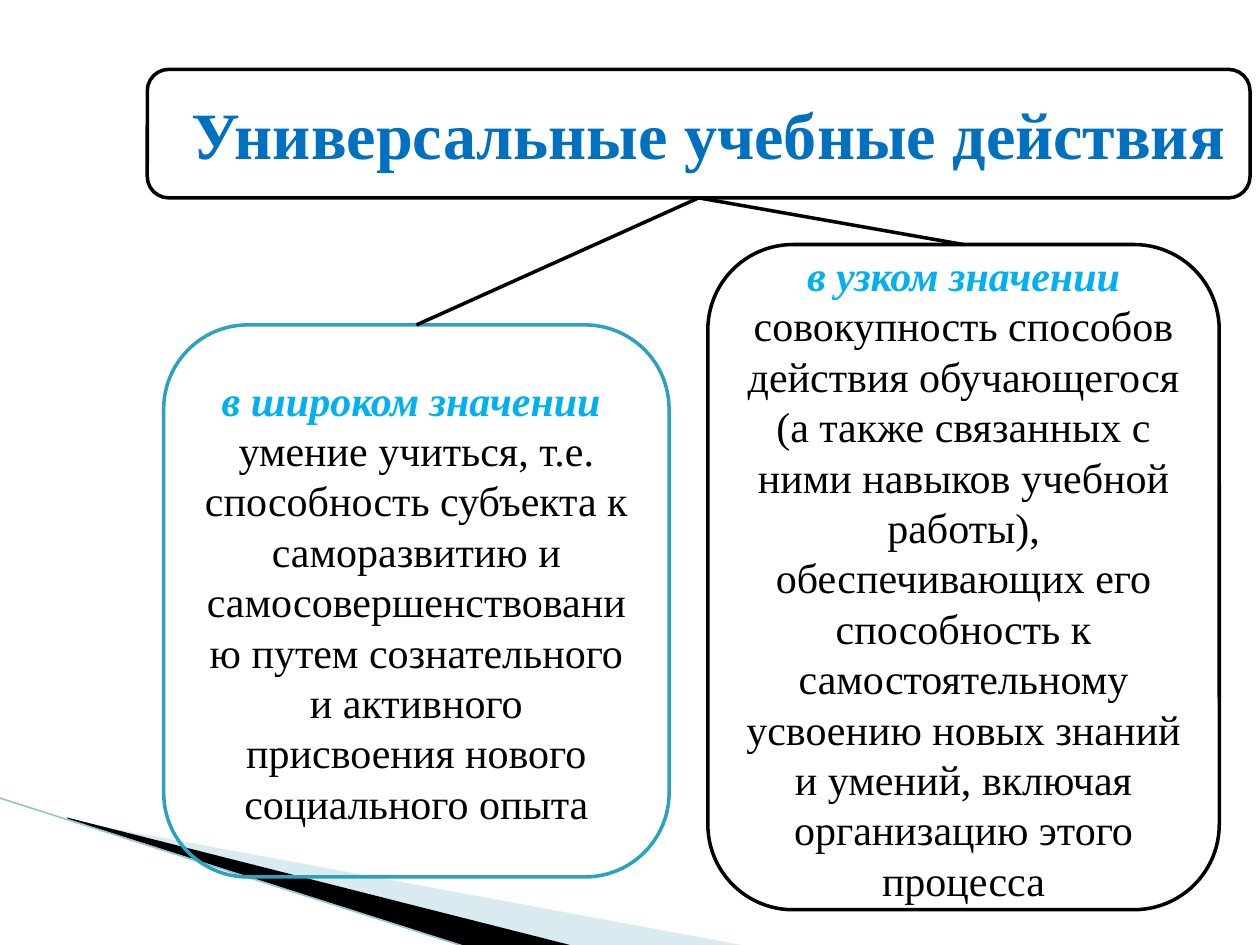
from dataclasses import dataclass

from lxml import etree
from pptx import Presentation
from pptx.dml.color import RGBColor
from pptx.enum import shapes, text
from pptx.oxml import ns
from pptx.util import Cm, Pt


@dataclass(frozen=True)
class Theme:
    font: str = "Times New Roman"
    title_size: float = 37.8
    body_size: float = 24
    outline: float = 2
    thin: float = 0.95
    title: str = "0070C0"
    accent: str = "00B0F0"
    ink: str = "000000"
    teal: str = "2DA2BF"
    pale: str = "A0CBDC"
    edge: str = "97C5D8"


THEME = Theme()


def rgb(value):
    return RGBColor.from_string(value)


def add_line(page, start, end, color, width):
    line = page.shapes.add_connector(
        shapes.MSO_CONNECTOR.STRAIGHT, *map(Cm, (*start, *end)))
    line.line.color.rgb = rgb(color)
    line.line.width = Pt(width)
    properties = line._element.spPr
    etree.SubElement(properties, ns.qn("a:effectLst"))
    return line


def add_span(para, words, size, color, bold=False, italic=False):
    span = para.add_run()
    span.text = words
    font = span.font
    font.name, font.size = THEME.font, Pt(size)
    font.bold, font.italic = bold, italic
    font.color.rgb = rgb(color)


def add_panel(page, box, color):
    panel = page.shapes.add_shape(
        shapes.MSO_SHAPE.ROUNDED_RECTANGLE, *map(Cm, box))
    panel.shadow.inherit = False
    panel.fill.background()
    panel.line.color.rgb = rgb(color)
    panel.line.width = Pt(THEME.outline)
    return panel


def add_wedge(page, points, color, opacity=None):
    corners = [(Cm(x), Cm(y)) for x, y in points]
    builder = page.shapes.build_freeform(*corners[0])
    builder.add_line_segments(corners[1:], close=True)
    wedge = builder.convert_to_shape()
    wedge.shadow.inherit = False
    wedge.fill.solid()
    wedge.fill.fore_color.rgb = rgb(color)
    wedge.line.fill.background()
    if opacity is not None:
        fill_color = wedge._element.spPr.find(".//" + ns.qn("a:srgbClr"))
        etree.SubElement(fill_color, ns.qn("a:alpha"), val=str(opacity * 1000))


def add_corner(page, box):
    """Sloping bands in the lower left corner."""
    left, top, width, height = box

    def place(*points):
        return [(left + x, top + y) for x, y in points]

    add_wedge(page, place((1.4, 0.46), (width, height),
                          (11.58, height), (1.4, 0.43)), THEME.pale, 40)
    add_wedge(page, place((1.35, 0.4), (11.61, height),
                          (9.45, 3.02), (1.37, 0.43)), THEME.ink)
    add_line(page, *place((-0.03, 0), (9.42, 3.02)), THEME.edge, THEME.thin)


def add_heading(page, box, words):
    """Outlined heading, with its text set slightly to the right."""
    left, top, width, height = box
    panel = add_panel(page, box, THEME.ink)
    label = page.shapes.add_textbox(
        Cm(left + 0.2), Cm(top + 0.02), Cm(width), Cm(height - 0.05))
    frame = label.text_frame
    frame.word_wrap = True
    frame.vertical_anchor = text.MSO_ANCHOR.MIDDLE
    para = frame.paragraphs[0]
    para.alignment = text.PP_ALIGN.CENTER
    add_span(para, words, THEME.title_size, THEME.title, bold=True)
    return panel


def add_meaning(page, box, color, term, definition, split):
    """One definition; split puts the definition in its own paragraph."""
    panel = add_panel(page, box, color)
    frame = panel.text_frame
    frame.word_wrap = True
    frame.vertical_anchor = text.MSO_ANCHOR.MIDDLE
    para = frame.paragraphs[0]
    add_span(para, term, THEME.body_size, THEME.accent, bold=True, italic=True)
    if split:
        para = frame.add_paragraph()
    add_span(para, definition, THEME.body_size, THEME.ink)
    for para in frame.paragraphs:
        para.alignment = text.PP_ALIGN.CENTER
    return panel


def join(page, parent, child):
    """Line from the parent's bottom centre to the child's top centre."""
    line = add_line(page, (0, 0), (1, 1), THEME.ink, THEME.outline)
    line.begin_connect(parent, 2)
    line.end_connect(child, 0)


def main():
    deck = Presentation()
    deck.slide_width, deck.slide_height = Cm(25.4), Cm(19.05)
    page = deck.slides.add_slide(deck.slide_layouts[6])

    add_corner(page, (0, 16.08, 15.11, 3))

    # Heading and its two meanings
    heading = add_heading(page, (2.97, 1.4, 22.23, 2.59),
                          "Универсальные учебные действия")
    broad = add_meaning(
        page, (3.3, 6.55, 10.19, 11.13), THEME.teal, "в широком значении ",
        "умение учиться, т.е. способность субъекта к саморазвитию и "
        "самосовершенствованию путем сознательного и активного присвоения "
        "нового социального опыта", split=True)
    narrow = add_meaning(
        page, (14.27, 4.93, 10.31, 13.41), THEME.ink, "в узком значении ",
        "совокупность способов действия обучающегося (а также связанных с "
        "ними навыков учебной работы), обеспечивающих его способность к "
        "самостоятельному усвоению новых знаний и умений, включая "
        "организацию этого процесса", split=False)

    # Branches
    for meaning in (broad, narrow):
        join(page, heading, meaning)

    deck.save("out.pptx")


if __name__ == "__main__":
    main()
